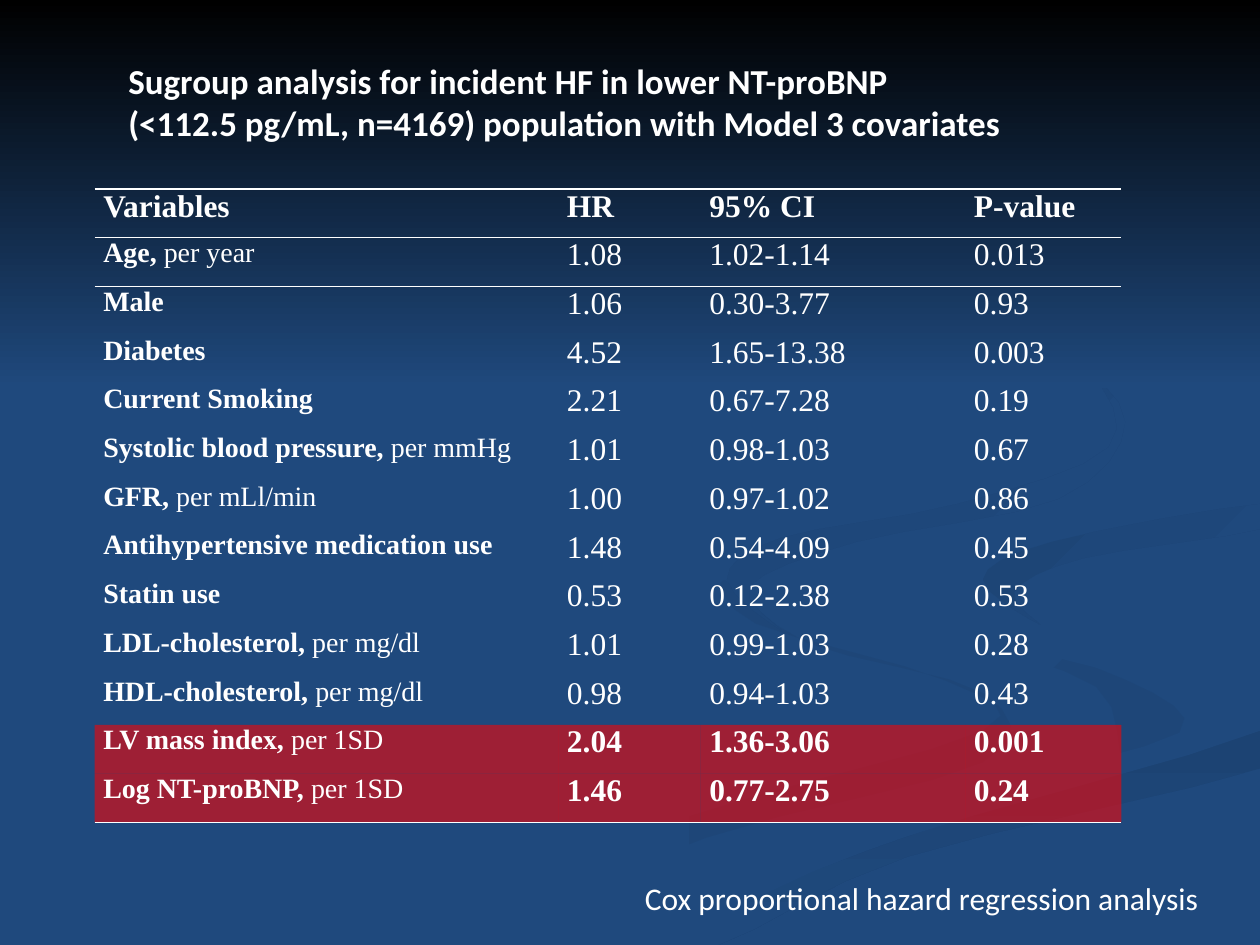
from lxml import etree
from pptx import Presentation
from pptx.dml.color import RGBColor
from pptx.oxml import parse_xml
from pptx.oxml.ns import nsdecls, qn
from pptx.util import Inches, Pt

WHITE = RGBColor(0xFF, 0xFF, 0xFF)
BLACK = RGBColor(0x00, 0x00, 0x00)
RED = RGBColor(0xFF, 0x00, 0x00)
BLUE = RGBColor(0x1F, 0x49, 0x7D)
DARK_BLUE = RGBColor(0x1E, 0x46, 0x78)
SHADE_BLUE = RGBColor(0x1C, 0x43, 0x73)
DEEP_BLUE = RGBColor(0x1D, 0x45, 0x76)
TABLE_FONT = "Times New Roman"
TEXT_FONT = "Calibri"
NO_STYLE = "{2D5ABB26-0587-4C30-8999-92F81FD0307C}"
SLIDE_WIDTH, SLIDE_HEIGHT = 10, 7.5
CURVE_STEPS = 4
RED_OPACITY = 57
HIGHLIGHT_START = 11

COLUMN_WIDTHS = [3.68, 1.13, 2.1, 1.24]
ROW_HEIGHT = 5.03 / 13
ROWS = [
    ("Variables", "", "HR", "95% CI", "P-value"),
    ("Age, ", "per year", "1.08", "1.02-1.14", "0.013"),
    ("Male", "", "1.06", "0.30-3.77", "0.93"),
    ("Diabetes", "", "4.52", "1.65-13.38", "0.003"),
    ("Current Smoking", "", "2.21", "0.67-7.28", "0.19"),
    ("Systolic blood pressure, ", "per mmHg", "1.01", "0.98-1.03", "0.67"),
    ("GFR, ", "per mLl/min", "1.00", "0.97-1.02", "0.86"),
    ("Antihypertensive medication use", "", "1.48", "0.54-4.09", "0.45"),
    ("Statin use", "", "0.53", "0.12-2.38", "0.53"),
    ("LDL-cholesterol, ", "per mg/dl", "1.01", "0.99-1.03", "0.28"),
    ("HDL-cholesterol, ", "per mg/dl", "0.98", "0.94-1.03", "0.43"),
    ("LV mass index, ", "per 1SD", "2.04", "1.36-3.06", "0.001"),
    ("Log NT-proBNP, ", "per 1SD", "1.46", "0.77-2.75", "0.24"),
]

RIBBONS = [
    ([(7.8, 5.5), (6.4, 5.1), (5.75, 4.6), (6, 4.95), (7.5, 5.4), (7.8, 5.8),
      (5.4, 6.5), (3, 7.5), (3.6, 7.5), (5.6, 6.65), (7.8, 6.05)],
     BLUE, DARK_BLUE, 0),
    ([(9.4, 5.7), (8.7, 5.3), (7.6, 5), (7.24, 4.64), (7.5, 5), (8.7, 5.45),
      (8.94, 6.05)], BLUE, DARK_BLUE, 45),
    ([(5, 7.5), (5.7, 7.5), (7.2, 6.8), (10, 6.1), (10, 5.8), (7.6, 6.5)],
     SHADE_BLUE, BLUE, 90),
    ([(7.25, 4.64), (7.6, 5), (9, 5.4), (9.4, 5.8), (7.4, 6.4), (4.77, 7.5),
      (5.2, 7.5), (7, 6.7), (10, 5.8), (10, 5.4), (8.3, 5), (7.8, 4.6),
      (8.5, 4.27), (10, 4), (10, 3.87), (7.9, 4.2)], BLUE, BLUE, 0),
    ([(7.8, 4.6), (8.26, 4.96), (8.05, 4.7), (8.6, 4.43), (10, 4.2),
      (10, 4), (8.35, 4.3)], DEEP_BLUE, BLUE, 45),
    ([(6.8, 4.3), (8.4, 3.96), (8.93, 3.35), (8.4, 2.75), (7.62, 2.33),
      (8.6, 2.9), (8.8, 3.55), (7.6, 4), (6.2, 4.27), (5.77, 4.6),
      (6.2, 5), (5.95, 4.65)], DEEP_BLUE, BLUE, 45),
]


def smooth(knots):
    """Return points of a closed Catmull-Rom curve, kept on the slide."""
    points = []
    for i, here in enumerate(knots):
        before, after, beyond = knots[i - 1], knots[(i + 1) % len(knots)], knots[(i + 2) % len(knots)]
        for step in range(CURVE_STEPS):
            t = step / CURVE_STEPS
            x, y = (b + t / 2 * (c - a + t * (2 * a - 5 * b + 4 * c - d + t * (3 * (b - c) + d - a)))
                    for a, b, c, d in zip(before, here, after, beyond))
            points.append((min(x, SLIDE_WIDTH), min(y, SLIDE_HEIGHT)))
    return points


def add_outline(page, points, start, end, angle):
    """Draw a closed outline with a clockwise-angled gradient."""
    corners = [(Inches(x), Inches(y)) for x, y in points]
    builder = page.shapes.build_freeform(*corners[0])
    builder.add_line_segments(corners[1:], close=True)
    shape = builder.convert_to_shape()
    shape.shadow.inherit = False
    shape.line.fill.background()
    if start == end:
        shape.fill.solid()
        shape.fill.fore_color.rgb = start
        return
    shape.fill.gradient()
    shape.fill.gradient_angle = (360 - angle) % 360
    for stop, color, position in zip(shape.fill.gradient_stops, (start, end), (0, 1)):
        stop.color.rgb = color
        stop.position = position


def style_span(span, font, size, bold):
    """Set the white font of a run."""
    span.font.name = font
    span.font.size = Pt(size)
    span.font.bold = bold
    span.font.color.rgb = WHITE


def add_text(page, text, left, top, width, height, size, bold=False, wrap=True):
    """Add a text box with one paragraph per line."""
    box = page.shapes.add_textbox(Inches(left), Inches(top), Inches(width), Inches(height))
    box.text_frame.word_wrap = wrap
    box.text_frame.text = text
    for para in box.text_frame.paragraphs:
        style_span(para.runs[0], TEXT_FONT, size, bold)


def add_rule(cell, side):
    """Add a white one-point border to a cell side."""
    cell._tc.get_or_add_tcPr().insert(0, parse_xml(
        f'<a:{side} {nsdecls("a")} w="12700"><a:solidFill>'
        f'<a:srgbClr val="{WHITE}"/></a:solidFill></a:{side}>'))


def fill_cell(cell, spans, highlighted):
    """Write (text, size, bold) spans into a cell and set its fill."""
    cell.margin_left = cell.margin_right = Inches(0.07)
    cell.margin_top = cell.margin_bottom = 0
    para = cell.text_frame.paragraphs[0]
    for text, size, bold in spans:
        span = para.add_run()
        span.text = text
        style_span(span, TABLE_FONT, size, bold)
    if highlighted:
        cell.fill.solid()
        cell.fill.fore_color.rgb = RED
        color = cell._tc.tcPr.find(".//" + qn("a:srgbClr"))
        etree.SubElement(color, qn("a:alpha")).set("val", str(RED_OPACITY * 1000))
    else:
        cell.fill.background()


def add_hazard_table(page):
    """Add the hazard ratio table with its rules and highlighted rows."""
    table = page.shapes.add_table(
        len(ROWS), len(COLUMN_WIDTHS), Inches(0.75), Inches(1.5),
        Inches(sum(COLUMN_WIDTHS)), Inches(ROW_HEIGHT * len(ROWS))).table
    table.first_row = table.horz_banding = False
    table._tbl.tblPr.find(qn("a:tableStyleId")).text = NO_STYLE
    for column, width in zip(table.columns, COLUMN_WIDTHS):
        column.width = Inches(width)
    last = len(ROWS) - 1
    for r, (name, unit, *values) in enumerate(ROWS):
        table.rows[r].height = Inches(ROW_HEIGHT)
        highlighted = r >= HIGHLIGHT_START
        label = [(name, 16 if r else 18, True)]
        if unit:
            label.append((unit, 16, False))
        bold = r == 0 or highlighted
        for c, spans in enumerate([label] + [[(value, 18, bold)] for value in values]):
            cell = table.cell(r, c)
            fill_cell(cell, spans, highlighted)
            if r in (0, last):
                add_rule(cell, "lnB")
            if r in (0, 1):
                add_rule(cell, "lnT")


def main():
    """Build the slide and save it."""
    deck = Presentation()
    deck.slide_width, deck.slide_height = Inches(SLIDE_WIDTH), Inches(SLIDE_HEIGHT)
    page = deck.slides.add_slide(deck.slide_layouts[6])
    page.background.fill.solid()
    page.background.fill.fore_color.rgb = BLUE
    for knots, start, end, angle in RIBBONS:
        add_outline(page, smooth(knots), start, end, angle)
    add_outline(page, [(0, 0), (0, 3.08), (SLIDE_WIDTH, 3.08), (SLIDE_WIDTH, 0)], BLACK, BLUE, 90)
    add_hazard_table(page)
    add_text(page, "Sugroup analysis for incident HF in lower NT-proBNP\n"
             "(<112.5 pg/mL, n=4169) population with Model 3 covariates",
             0.92, 0.42, 8.58, 0.77, 20, bold=True)
    add_text(page, "Cox proportional hazard regression analysis",
             5.02, 6.93, 4.65, 0.4, 18, wrap=False)
    deck.save("out.pptx")


if __name__ == "__main__":
    main()
